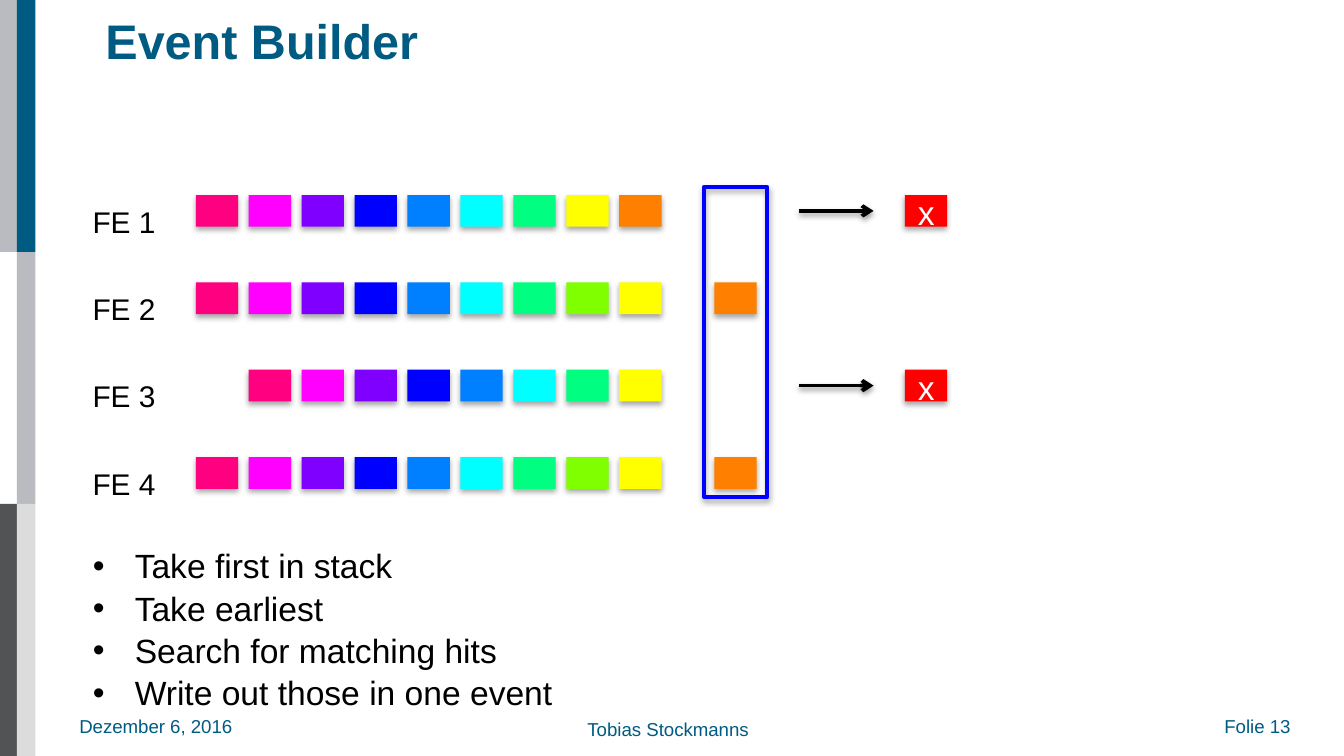
from lxml import etree
from pptx import Presentation
from pptx.dml.color import RGBColor
from pptx.enum import shapes, text
from pptx.oxml import ns
from pptx.util import Pt

WHITE = RGBColor(0xFF, 0xFF, 0xFF)
BLACK = RGBColor(0x00, 0x00, 0x00)
TEAL = RGBColor(0x00, 0x5B, 0x82)
SILVER = RGBColor(0xB9, 0xBB, 0xC0)
CHARCOAL = RGBColor(0x51, 0x53, 0x55)
PALE = RGBColor(0xDC, 0xDC, 0xDC)
PINK = RGBColor(0xFF, 0x00, 0x80)
MAGENTA = RGBColor(0xFF, 0x00, 0xFF)
VIOLET = RGBColor(0x80, 0x00, 0xFF)
BLUE = RGBColor(0x00, 0x00, 0xFF)
AZURE = RGBColor(0x00, 0x80, 0xFF)
CYAN = RGBColor(0x00, 0xFF, 0xFF)
MINT = RGBColor(0x00, 0xFF, 0x80)
LIME = RGBColor(0x80, 0xFF, 0x00)
YELLOW = RGBColor(0xFF, 0xFF, 0x00)
ORANGE = RGBColor(0xFF, 0x80, 0x00)
RED = RGBColor(0xFF, 0x00, 0x00)

COMMON = [PINK, MAGENTA, VIOLET, BLUE, AZURE, CYAN, MINT]
ROWS = [
    ("FE 1", COMMON + [YELLOW, ORANGE], False),
    ("FE 2", COMMON + [LIME, YELLOW], True),
    ("FE 3", COMMON + [YELLOW], False),
    ("FE 4", COMMON + [LIME, YELLOW], True),
]
SLOTS = 9
CELL_W, CELL_H = 22.7, 17
CELL_PITCH, ROW_PITCH = 28.35, 46.8


def style(p, size, color, bold=False):
    p.font.name = "Arial"
    p.font.size = Pt(size)
    p.font.bold = bold
    p.font.color.rgb = color


def add_shadow(sp_pr, distance, opacity):
    effects = sp_pr.find(ns.qn("a:effectLst"))
    if effects is None:
        effects = etree.SubElement(sp_pr, ns.qn("a:effectLst"))
    shadow = etree.SubElement(
        effects, ns.qn("a:outerShdw"), blurRad=str(Pt(3.1)),
        dist=str(Pt(distance)), dir="5400000", rotWithShape="0")
    color = etree.SubElement(shadow, ns.qn("a:srgbClr"), val=str(BLACK))
    etree.SubElement(color, ns.qn("a:alpha"), val=str(opacity * 1000))


def add_rect(s, x, y, w, h, fill=None, line=None, shadow=True):
    sp = s.shapes.add_shape(
        shapes.MSO_SHAPE.RECTANGLE, Pt(x), Pt(y), Pt(w), Pt(h))
    if fill is None:
        sp.fill.background()
    else:
        sp.fill.solid()
        sp.fill.fore_color.rgb = fill
    if line is None:
        sp.line.fill.background()
    else:
        sp.line.color.rgb = line
        sp.line.width = Pt(2.25)
    sp.shadow.inherit = False
    if shadow:
        add_shadow(sp._element.spPr, 1.8, 35)
    return sp


def add_label(s, x, y, w, h, words, size, color, inset=True):
    tf = s.shapes.add_textbox(Pt(x), Pt(y), Pt(w), Pt(h)).text_frame
    tf.word_wrap = False
    tf.auto_size = text.MSO_AUTO_SIZE.SHAPE_TO_FIT_TEXT
    if not inset:
        tf.margin_left = tf.margin_right = tf.margin_top = tf.margin_bottom = 0
    p = tf.paragraphs[0]
    p.text = words
    p.line_spacing = 1.05
    style(p, size, color)


def add_arrow(s, x, y, length):
    line = s.shapes.add_connector(
        shapes.MSO_CONNECTOR.STRAIGHT, Pt(x), Pt(y), Pt(x + length), Pt(y))
    line.line.color.rgb = BLACK
    line.line.width = Pt(2)
    etree.SubElement(line.line._get_or_add_ln(), ns.qn("a:tailEnd"), type="arrow")
    add_shadow(line._element.spPr, 1.6, 38)


def add_sidebar(s, x, y, w, h):
    columns = [(SILVER, None, CHARCOAL), (TEAL, SILVER, PALE)]
    for col, fills in enumerate(columns):
        for row, fill in enumerate(fills):
            if fill is not None:
                add_rect(s, x + col * (w - 10), y + row * h / 3, 10, h / 3,
                         fill, shadow=False)


def add_footer(s, x, y, w, h):
    add_label(s, x, y, 91.5, h, "Dezember 6, 2016", 10, TEAL, inset=False)
    add_label(s, x + w - 44.6, y, 44.6, h, "Folie 13", 10, TEAL, inset=False)
    add_label(s, x + 272.2, y + 1.5, 87.8, h, "Tobias Stockmanns", 10, TEAL,
              inset=False)


def add_title(s, x, y, w, h):
    sp = s.shapes.title
    sp.left, sp.top, sp.width, sp.height = Pt(x), Pt(y), Pt(w), Pt(h)
    tf = sp.text_frame
    tf.margin_left = tf.margin_right = tf.margin_top = tf.margin_bottom = 0
    tf.vertical_anchor = text.MSO_ANCHOR.MIDDLE
    tf.auto_size = text.MSO_AUTO_SIZE.NONE
    p = tf.paragraphs[0]
    p.text = "Event Builder"
    p.alignment = text.PP_ALIGN.LEFT
    style(p, 26, TEAL, bold=True)


def add_steps(s, x, y, w, h):
    sp = s.placeholders[1]
    sp.left, sp.top, sp.width, sp.height = Pt(x), Pt(y), Pt(w), Pt(h)
    tf = sp.text_frame
    tf.margin_right = 0
    tf.word_wrap = True
    tf.auto_size = text.MSO_AUTO_SIZE.NONE
    steps = ["Take first in stack", "Take earliest",
             "Search for matching hits", "Write out those in one event"]
    tf.text = "\n".join(steps)
    for p in tf.paragraphs:
        p_pr = p._p.get_or_add_pPr()
        p_pr.set("marL", str(Pt(22.5)))
        p_pr.set("indent", str(Pt(-22.5)))
        etree.SubElement(p_pr, ns.qn("a:buFont"), typeface="Arial")
        etree.SubElement(p_pr, ns.qn("a:buChar"), char="•")
        p.space_before = Pt(0)
        p.line_spacing = 1.05
        style(p, 18, BLACK)


def add_hit_row(s, x, y, label, hits, matched):
    add_label(s, x, y, 49, 26.6, label, 16, BLACK)
    first = SLOTS - len(hits)
    for slot, fill in enumerate(hits, first):
        add_rect(s, x + 62.4 + slot * CELL_PITCH, y, CELL_W, CELL_H, fill)
    if matched:
        add_rect(s, x + 340.2, y, CELL_W, CELL_H, ORANGE)
    else:
        add_arrow(s, x + 385.5, y + CELL_H / 2, 40)
        sp = add_rect(s, x + 442.2, y, CELL_W, CELL_H, RED)
        tf = sp.text_frame
        tf.vertical_anchor = text.MSO_ANCHOR.MIDDLE
        p = tf.paragraphs[0]
        p.text = "x"
        p.alignment = text.PP_ALIGN.CENTER
        p.line_spacing = 1.05
        style(p, 18, WHITE)


def add_event_diagram(s, x, y):
    for i, row in enumerate(ROWS):
        add_hit_row(s, x, y + i * ROW_PITCH, *row)
    add_rect(s, x + 334.6, y - 4.2, 34, 165.8, line=BLUE)


def main():
    prs = Presentation()
    prs.slide_width, prs.slide_height = Pt(720), Pt(405)
    s = prs.slides.add_slide(prs.slide_layouts[1])
    add_sidebar(s, 0, 0, 19, 405)
    add_footer(s, 42.5, 382.5, 658, 12.2)
    add_title(s, 56.5, 4.5, 523.5, 34)
    add_steps(s, 42.5, 287.5, 262, 94.5)
    add_event_diagram(s, 42.5, 104.5)
    prs.save("out.pptx")


if __name__ == "__main__":
    main()
